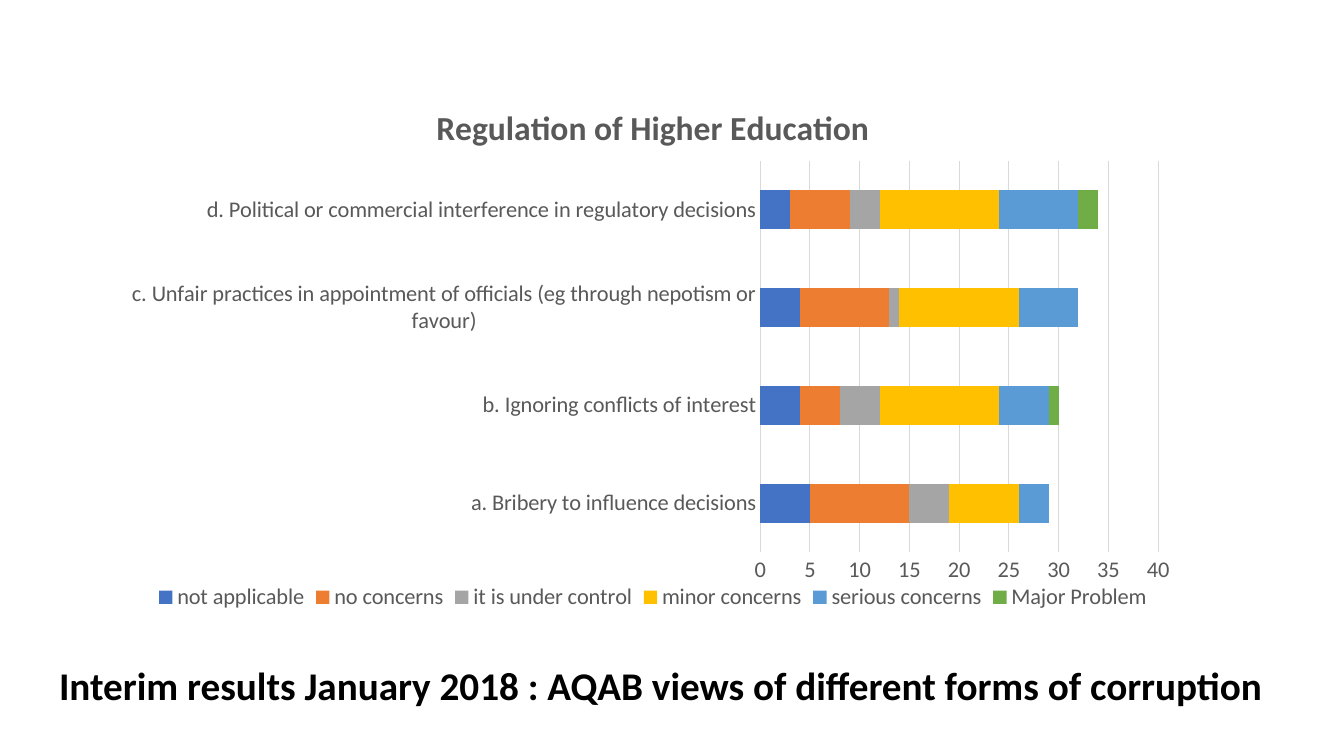
import pptx
import pptx.chart.data
import pptx.dml.color
import pptx.enum.chart
import pptx.oxml
import pptx.oxml.ns
import pptx.util
from pptx.util import Cm, Pt

FONT = "Calibri"
GREY = "595959"
RULE = "D9D9D9"
CAPTION = "Interim results January 2018 : AQAB views of different forms of corruption"
TITLE = "Regulation of Higher Education"
CATEGORIES = [
    "a. Bribery to influence decisions",
    "b. Ignoring conflicts of interest",
    "c. Unfair practices in appointment of officials (eg through nepotism or favour)",
    "d. Political or commercial interference in regulatory decisions",
]
ANSWERS = [
    ("not applicable", (5, 4, 4, 3), "4472C4"),
    ("no concerns", (10, 4, 9, 6), "ED7D31"),
    ("it is under control", (4, 4, 1, 3), "A5A5A5"),
    ("minor concerns", (7, 12, 12, 12), "FFC000"),
    ("serious concerns", (3, 5, 6, 8), "5B9BD5"),
    ("Major Problem", (0, 1, 0, 2), "70AD47"),
]
PLOT = {"x": 0.6, "y": 0.14, "w": 0.37, "h": 0.7}
LEGEND = {"x": 0.03, "y": 0.89, "w": 0.94, "h": 0.06}


def rgb(value):
    return pptx.dml.color.RGBColor.from_string(value)


def style_font(font, size, color=GREY, bold=False):
    font.name = FONT
    font.size = Pt(size)
    font.bold = bold
    font.color.rgb = rgb(color)


def write(tf, text, **fmt):
    r = tf.paragraphs[0].add_run()
    r.text = text
    style_font(r.font, **fmt)


def style_line(line):
    line.color.rgb = rgb(RULE)
    line.width = Pt(0.75)


def place(element, index, box, target=""):
    for old in element.findall(pptx.oxml.ns.qn("c:layout")):
        element.remove(old)
    parts = target + '<c:xMode val="edge"/><c:yMode val="edge"/>'
    parts += "".join(f'<c:{key} val="{val}"/>' for key, val in box.items())
    ns = pptx.oxml.ns.nsdecls("c")
    element.insert(index, pptx.oxml.parse_xml(
        f"<c:layout {ns}><c:manualLayout>{parts}</c:manualLayout></c:layout>"))


def add_answers_chart(s):
    data = pptx.chart.data.CategoryChartData()
    data.categories = CATEGORIES
    for name, values, _ in ANSWERS:
        data.add_series(name, values)
    chart = s.shapes.add_chart(
        pptx.enum.chart.XL_CHART_TYPE.BAR_STACKED,
        Cm(2.9), Cm(2.08), Cm(27.1), Cm(14.1), data).chart
    style_font(chart.font, 10, "000000")
    chart.has_title = True
    write(chart.chart_title.text_frame, TITLE, size=24, bold=True)
    chart.chart_title.include_in_layout = False
    chart.has_legend = True
    chart.legend.position = pptx.enum.chart.XL_LEGEND_POSITION.BOTTOM
    chart.legend.include_in_layout = False
    style_font(chart.legend.font, 16)

    plot = chart.plots[0]
    plot.gap_width = 150
    plot.overlap = 100
    plot.vary_by_categories = False
    for series, (_, _, color) in zip(plot.series, ANSWERS):
        series.format.fill.solid()
        series.format.fill.fore_color.rgb = rgb(color)

    for axis in (chart.category_axis, chart.value_axis):
        axis.major_tick_mark = pptx.enum.chart.XL_TICK_MARK.NONE
        axis.minor_tick_mark = pptx.enum.chart.XL_TICK_MARK.NONE
        style_font(axis.tick_labels.font, 16)
    style_line(chart.category_axis.format.line)
    chart.value_axis.format.line.fill.background()
    chart.value_axis.minimum_scale = 0
    chart.value_axis.maximum_scale = 40
    chart.value_axis.major_unit = 5
    style_line(chart.value_axis.major_gridlines.format.line)

    root = chart._chartSpace.chart
    place(root.plotArea, 0, PLOT, '<c:layoutTarget val="inner"/>')
    place(root.find(pptx.oxml.ns.qn("c:legend")), 1, LEGEND)


def main():
    prs = pptx.Presentation()
    prs.slide_width = Cm(33.87)
    prs.slide_height = Cm(19.05)
    s = prs.slides.add_slide(prs.slide_layouts[6])
    tf = s.shapes.add_textbox(Cm(1.24), Cm(16.54), Cm(32.05), Cm(1.45)).text_frame
    tf.word_wrap = True
    write(tf, CAPTION, size=28, color="000000", bold=True)
    add_answers_chart(s)
    prs.save("out.pptx")


if __name__ == "__main__":
    main()
